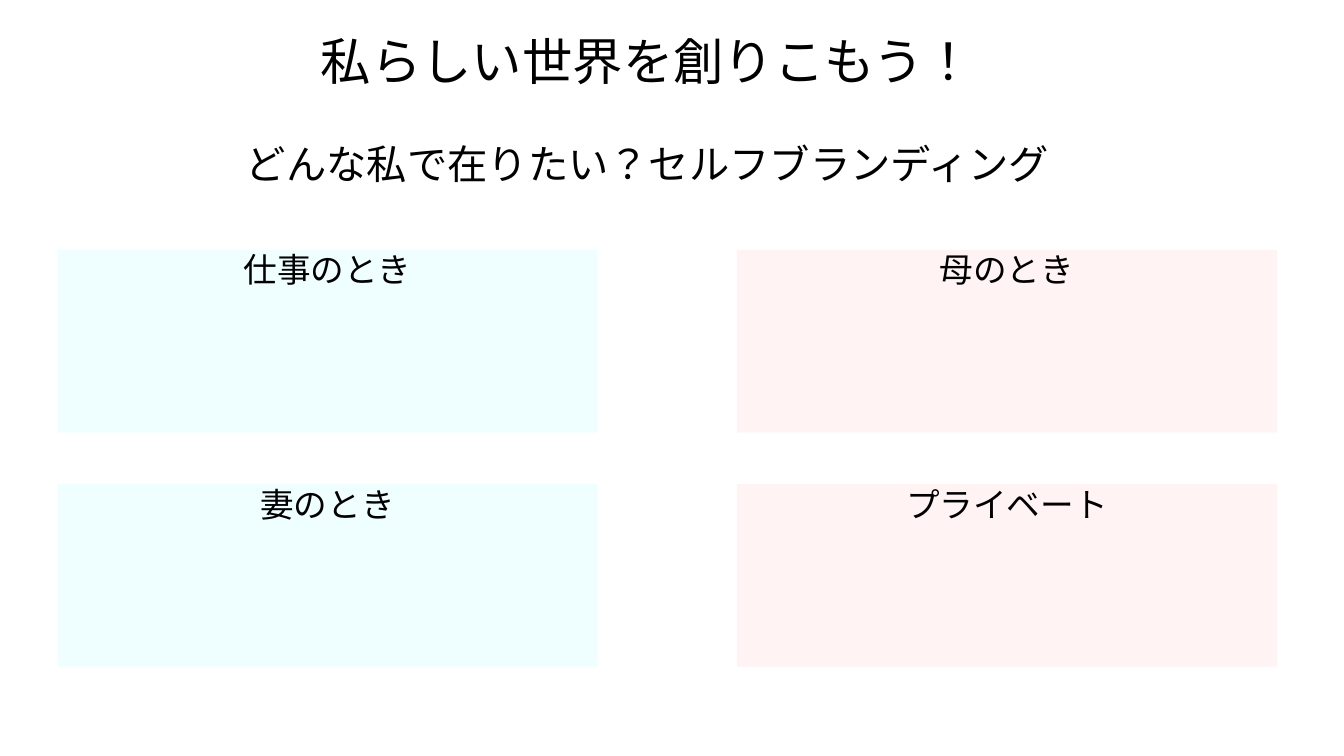
import pptx
import pptx.util
import pptx.dml.color
import pptx.enum.lang
import pptx.enum.shapes
import pptx.enum.text
import pptx.oxml.ns
import lxml.etree

Cm = pptx.util.Cm
Pt = pptx.util.Pt
RGBColor = pptx.dml.color.RGBColor

FONT = "Noto Sans CJK JP"
BLACK = RGBColor(0x00, 0x00, 0x00)
PALE_CYAN = RGBColor(0xEF, 0xFF, 0xFF)
PALE_PINK = RGBColor(0xFF, 0xF3, 0xF3)

HEADING = "私らしい世界を創りこもう！"
SUBHEADING = "どんな私で在りたい？セルフブランディング"
SCENES = [
    ["仕事のとき", "母のとき"],
    ["妻のとき", "プライベート"],
]
COLUMN_FILLS = [PALE_CYAN, PALE_PINK]

GRID_LEFT, GRID_TOP = 1.45, 6.3
CARD_WIDTH, CARD_HEIGHT = 13.61, 4.6
COLUMN_STEP, ROW_STEP = 17.12, 5.9


def write(paragraph, text, size, space_before=0):
    paragraph.alignment = pptx.enum.text.PP_ALIGN.CENTER
    paragraph.line_spacing = 0.9
    paragraph.space_before = Pt(space_before)
    run = paragraph.add_run()
    run.text = text
    run.font.size = Pt(size)
    run.font.name = FONT
    run.font.color.rgb = BLACK
    run.font.language_id = pptx.enum.lang.MSO_LANGUAGE_ID.JAPANESE
    east_asian = lxml.etree.SubElement(
        run._r.get_or_add_rPr(), pptx.oxml.ns.qn("a:ea"))
    east_asian.set("typeface", FONT)


def prepare_frame(shape, margin_top):
    frame = shape.text_frame
    frame.word_wrap = True
    frame.auto_size = pptx.enum.text.MSO_AUTO_SIZE.NONE
    frame.vertical_anchor = pptx.enum.text.MSO_ANCHOR.TOP
    frame.margin_top = Cm(margin_top)
    return frame


def add_headings(slide):
    title = slide.shapes.title
    title.left, title.top = Cm(2.72), Cm(0.53)
    title.width, title.height = Cm(27.2), Cm(6.63)
    frame = prepare_frame(title, margin_top=0.41)
    write(frame.paragraphs[0], HEADING, size=36)
    write(frame.add_paragraph(), SUBHEADING, size=28.8, space_before=37.5)


def add_card(slide, scene, row, column):
    card = slide.shapes.add_shape(
        pptx.enum.shapes.MSO_SHAPE.RECTANGLE,
        Cm(GRID_LEFT + column * COLUMN_STEP), Cm(GRID_TOP + row * ROW_STEP),
        Cm(CARD_WIDTH), Cm(CARD_HEIGHT))
    card.shadow.inherit = False
    card.fill.solid()
    card.fill.fore_color.rgb = COLUMN_FILLS[column]
    card.line.fill.background()
    write(prepare_frame(card, margin_top=0.1).paragraphs[0], scene, size=24)


def main():
    deck = pptx.Presentation()
    deck.slide_width, deck.slide_height = Cm(33.87), Cm(19.05)
    slide = deck.slides.add_slide(deck.slide_layouts[5])
    add_headings(slide)
    for row, scenes in enumerate(SCENES):
        for column, scene in enumerate(scenes):
            add_card(slide, scene, row, column)
    deck.save("out.pptx")


if __name__ == "__main__":
    main()
